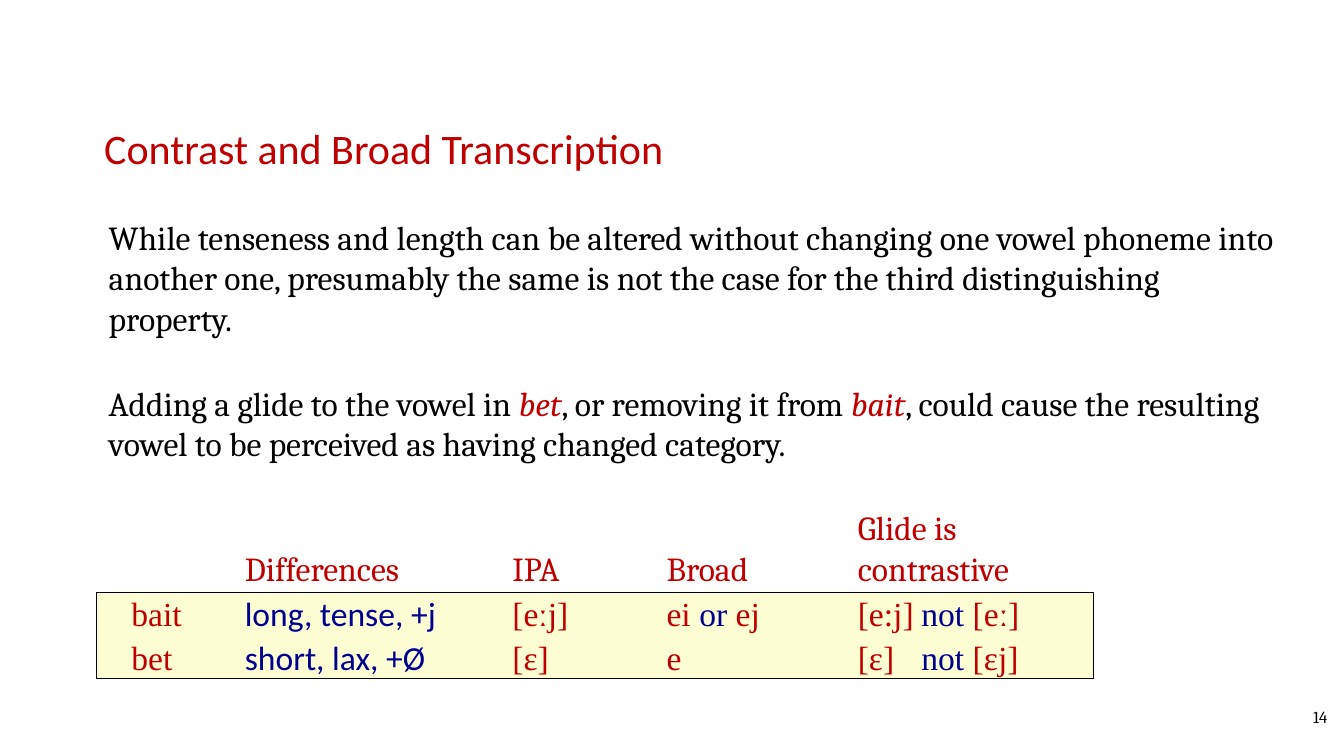
"""Build a slide on vowel contrast and broad transcription."""
from pptx import Presentation
from pptx import util as u
from pptx.dml.color import RGBColor
from pptx.enum import shapes, text
from pptx.oxml.ns import qn
from lxml import etree

HUES = {"red": "C00000", "blue": "000090", "black": "000000",
        "white": "FFFFFF", "yellow": "F4F84C"}
BODY, HEAD, PHON = "Cambria", "Calibri", "Times New Roman"
LEFT, RIGHT = text.PP_ALIGN.LEFT, text.PP_ALIGN.RIGHT
TOP, STEP, HIGH = 7.2, 0.59, 0.64


def hue(name):
    return RGBColor.from_string(HUES[name])


def add_box(slide, at, lines, font=BODY, size=32, align=LEFT, wrap=False, grow=True):
    """Add a text box; each line is a list of (words, colour, italic) runs."""
    box = slide.shapes.add_textbox(*map(u.Inches, at))
    frame = box.text_frame
    frame.word_wrap = wrap
    fit = text.MSO_AUTO_SIZE
    frame.auto_size = fit.SHAPE_TO_FIT_TEXT if grow else fit.NONE
    for i, line in enumerate(lines):
        para = frame.add_paragraph() if i else frame.paragraphs[0]
        para.alignment = align
        for words, tint, *slant in line:
            run = para.add_run()
            run.text = words
            run.font.name = font
            run.font.size = u.Pt(size)
            run.font.color.rgb = hue(tint)
            run.font.italic = bool(slant)
    return box


def add_panel(slide, at, tint, alpha):
    """Add a thinly outlined rectangle with a see-through fill."""
    panel = slide.shapes.add_shape(shapes.MSO_SHAPE.RECTANGLE, *map(u.Inches, at))
    panel.shadow.inherit = False
    panel.fill.solid()
    panel.fill.fore_color.rgb = hue(tint)
    panel.line.color.rgb = hue("black")
    panel.line.width = u.Pt(0.75)
    shade = panel.fill._xPr.find(qn("a:solidFill"))[0]
    etree.SubElement(shade, qn("a:alpha"), val=str(alpha * 1000))


def add_tab(box, stop):
    """Give the first paragraph of a box one left tab stop."""
    props = box.text_frame.paragraphs[0]._p.get_or_add_pPr()
    tabs = etree.SubElement(props, qn("a:tabLst"))
    etree.SubElement(tabs, qn("a:tab"), pos=str(u.Inches(stop)), algn="l")


def add_col(slide, left, head, cells, font=PHON, stop=None):
    """Add a column: a heading that ends at one level, then its cells."""
    if head:
        wide, lines = head
        high = HIGH + 0.54 * (len(lines) - 1)
        add_box(slide, (left, TOP + HIGH - high, wide, high),
                [[(line, "red")] for line in lines])
    for row, (wide, runs) in enumerate(cells, 1):
        box = add_box(slide, (left, TOP + row * STEP, wide, HIGH), [runs], font,
                      wrap=bool(stop))
        if stop:
            add_tab(box, stop)


def main():
    deck = Presentation()
    deck.slide_width, deck.slide_height = u.Inches(17.78), u.Inches(10)
    slide = deck.slides.add_slide(deck.slide_layouts[6])

    add_panel(slide, (1.28, 7.83, 13.19, 1.15), "yellow", 25)
    first = add_box(slide, (1.34, 2.82, 15.75, 1.72), [[
        ("While tenseness and length can be altered without changing one vowel "
         "phoneme into another one, presumably the same is not the case for the "
         "third distinguishing property.", "black")]], wrap=True)
    first.fill.solid()
    first.fill.fore_color.rgb = hue("white")
    add_box(slide, (1.34, 5.01, 15.75, 1.18), [[
        ("Adding a glide to the vowel in ", "black"), ("bet", "red", True),
        (", or removing it from ", "black"), ("bait", "red", True),
        (", could cause the resulting vowel to be perceived as having changed "
         "category.", "black")]], wrap=True)
    add_box(slide, (1.28, 1.57, 7.6, 0.77),
            [[("Contrast and Broad Transcription", "red")]], HEAD, 40)

    add_col(slide, 1.64, None,
            [(0.88, [("bait", "red")]), (0.75, [("bet", "red")])])
    add_col(slide, 3.14, (2.37, ["Differences"]),
            [(2.76, [("long, tense, +j", "blue")]),
             (2.62, [("short, lax, +Ø", "blue")])], HEAD)
    add_col(slide, 6.68, (0.95, ["IPA "]),
            [(0.95, [("[eːj]", "red")]), (0.69, [("[ɛ]", "red")])])
    add_col(slide, 8.72, (1.36, ["Broad"]),
            [(1.45, [("ei ", "red"), ("or ", "blue"), ("ej", "red")]),
             (0.4, [("e", "red")])])
    add_col(slide, 11.25, (2.43, ["Glide is", "contrastive"]),
            [(2.6, [("[e:j]\t", "red"), ("not ", "blue"), ("[eː]", "red")]),
             (2.6, [("[ɛ]\t", "red"), ("not ", "blue"), ("[ɛj]", "red")])], stop=0.84)

    add_box(slide, (15.58, 9.3, 2.08, 0.5), [[("14", "black")]],
            size=16, align=RIGHT, wrap=True, grow=False)
    deck.save("out.pptx")


if __name__ == "__main__":
    main()
